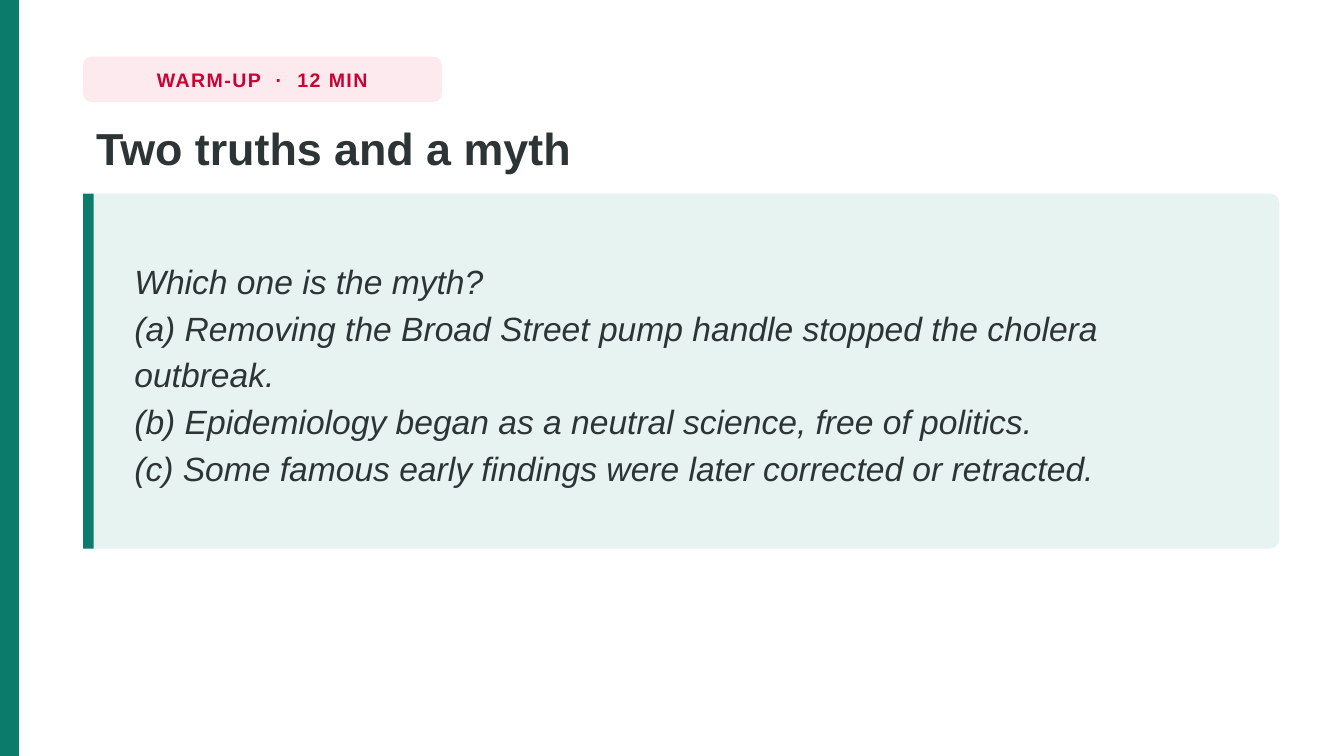
import pptx
import pptx.util
import pptx.dml.color
import pptx.enum.shapes
import pptx.enum.text

Cm, Pt = pptx.util.Cm, pptx.util.Pt
RGB = pptx.dml.color.RGBColor
SHAPE = pptx.enum.shapes.MSO_SHAPE
ANCHOR = pptx.enum.text.MSO_ANCHOR
ALIGN = pptx.enum.text.PP_ALIGN

TEAL = RGB(0x0B, 0x7B, 0x6B)
MINT = RGB(0xE6, 0xF3, 0xF0)
PINK = RGB(0xFD, 0xEA, 0xEF)
RED = RGB(0xCC, 0x00, 0x33)
INK = RGB(0x2D, 0x34, 0x36)

BADGE = ["WARM-UP  ·  12 MIN"]
TITLE = ["Two truths and a myth"]
QUIZ = [
    "Which one is the myth?",
    "(a) Removing the Broad Street pump handle stopped the cholera outbreak.",
    "(b) Epidemiology began as a neutral science, free of politics.",
    "(c) Some famous early findings were later corrected or retracted.",
]

# Lengths in cm
WIDTH, HEIGHT = 25.4, 14.29
LEFT, SPAN = 1.57, 22.61
TOP, TALL = 3.66, 6.71
PAD = 0.13
RADIUS = 0.16


def block(slide, box, fill, radius=0):
    kind = SHAPE.ROUNDED_RECTANGLE if radius else SHAPE.RECTANGLE
    shape = slide.shapes.add_shape(kind, *map(Cm, box))
    if radius:
        shape.adjustments[0] = radius / min(box[2:])
    shape.fill.solid()
    shape.fill.fore_color.rgb = fill
    shape.line.fill.background()
    shape.shadow.inherit = False


def write(slide, box, lines, size, color, bold=False, italic=False,
          anchor=ANCHOR.TOP, align=ALIGN.LEFT, lead=1.0, wrap=True):
    frame = slide.shapes.add_textbox(*map(Cm, box)).text_frame
    frame.word_wrap = wrap
    frame.vertical_anchor = anchor
    frame.text = "\n".join(lines)
    for para in frame.paragraphs:
        para.alignment = align
        para.line_spacing = lead
        font = para.font
        font.name, font.size = "Arial", Pt(size)
        font.bold, font.italic = bold, italic
        font.color.rgb = color
    return frame


def main():
    deck = pptx.Presentation()
    deck.slide_width, deck.slide_height = Cm(WIDTH), Cm(HEIGHT)
    slide = deck.slides.add_slide(deck.slide_layouts[6])

    block(slide, (0, 0, 0.36, HEIGHT), TEAL)

    badge = (LEFT, 1.07, 6.78, 0.86)
    block(slide, badge, PINK, RADIUS)
    label = write(slide, badge, BADGE, 10.5, RED, bold=True,
                  anchor=ANCHOR.MIDDLE, align=ALIGN.CENTER, wrap=False)
    # Letter spacing, in hundredths of a point
    label.paragraphs[0].runs[0]._r.get_or_add_rPr().set("spc", "80")

    write(slide, (LEFT, 2.13, SPAN, 1.42), TITLE, 24, INK, bold=True, lead=1.02)

    block(slide, (LEFT, TOP, SPAN, TALL), MINT, 0.18)
    block(slide, (LEFT, TOP, 0.2, TALL), TEAL)
    write(slide, (LEFT + 0.72, TOP + PAD, 21.21, TALL - 2 * PAD), QUIZ, 18, INK,
          italic=True, anchor=ANCHOR.MIDDLE, lead=1.16)

    deck.save("out.pptx")


if __name__ == "__main__":
    main()
